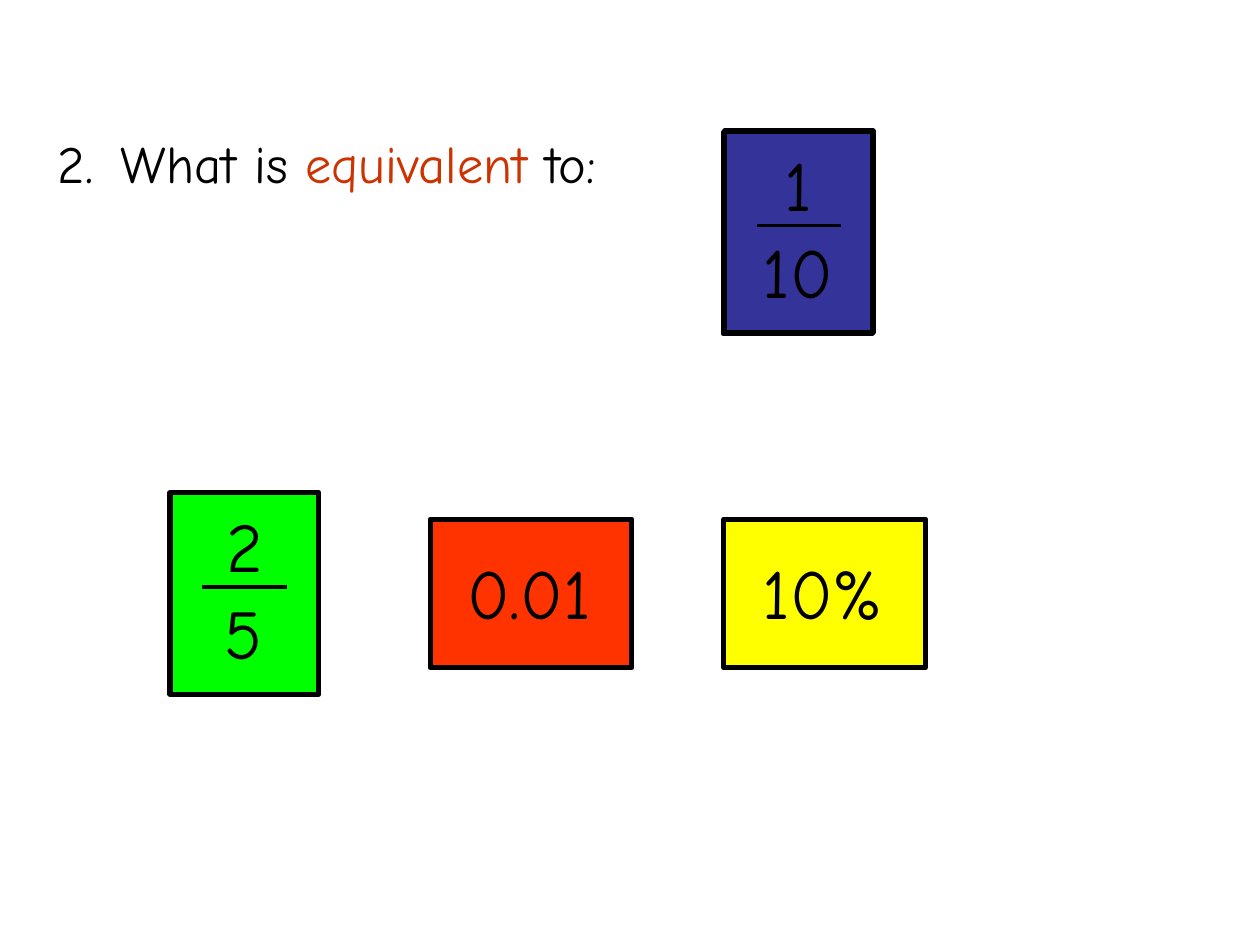
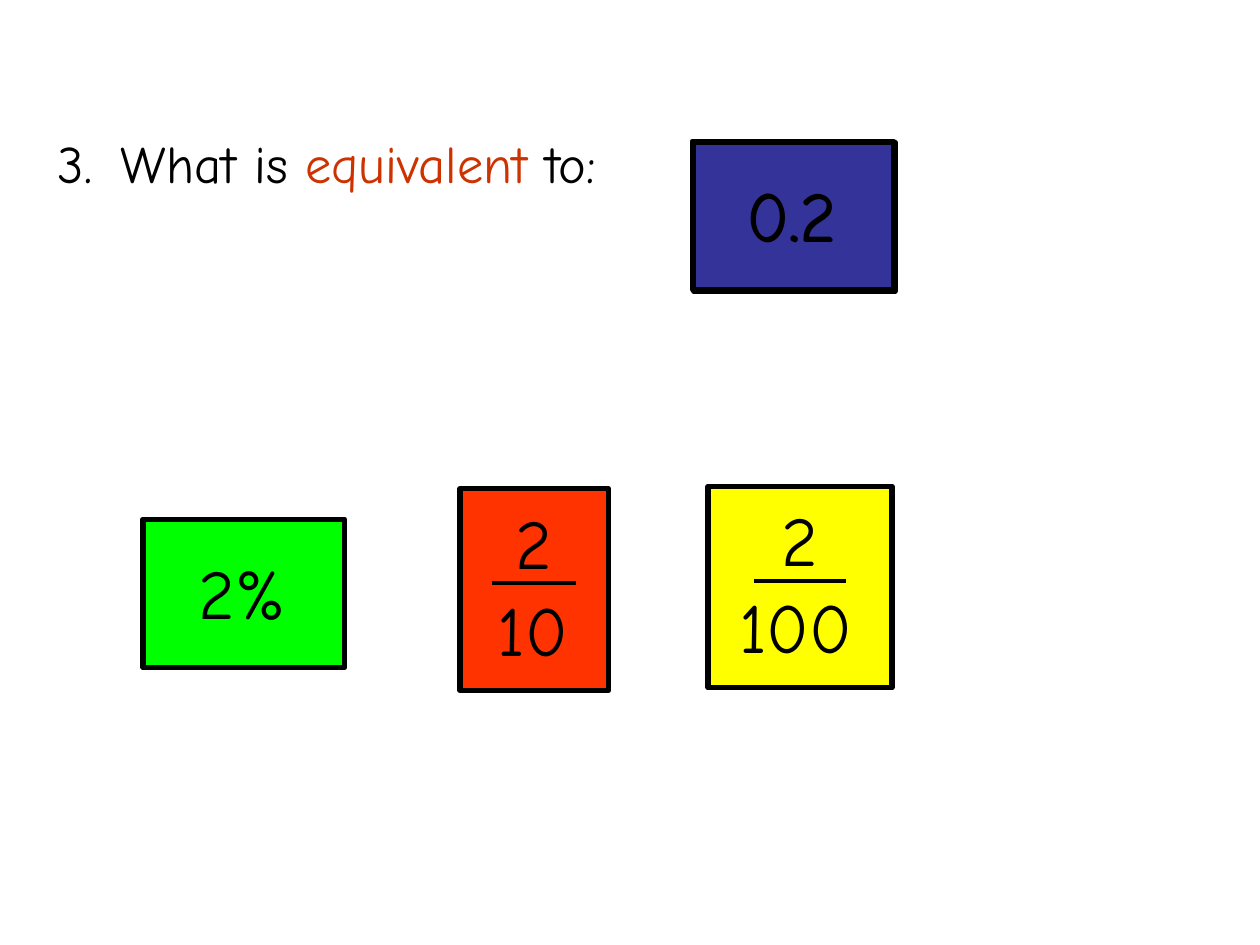
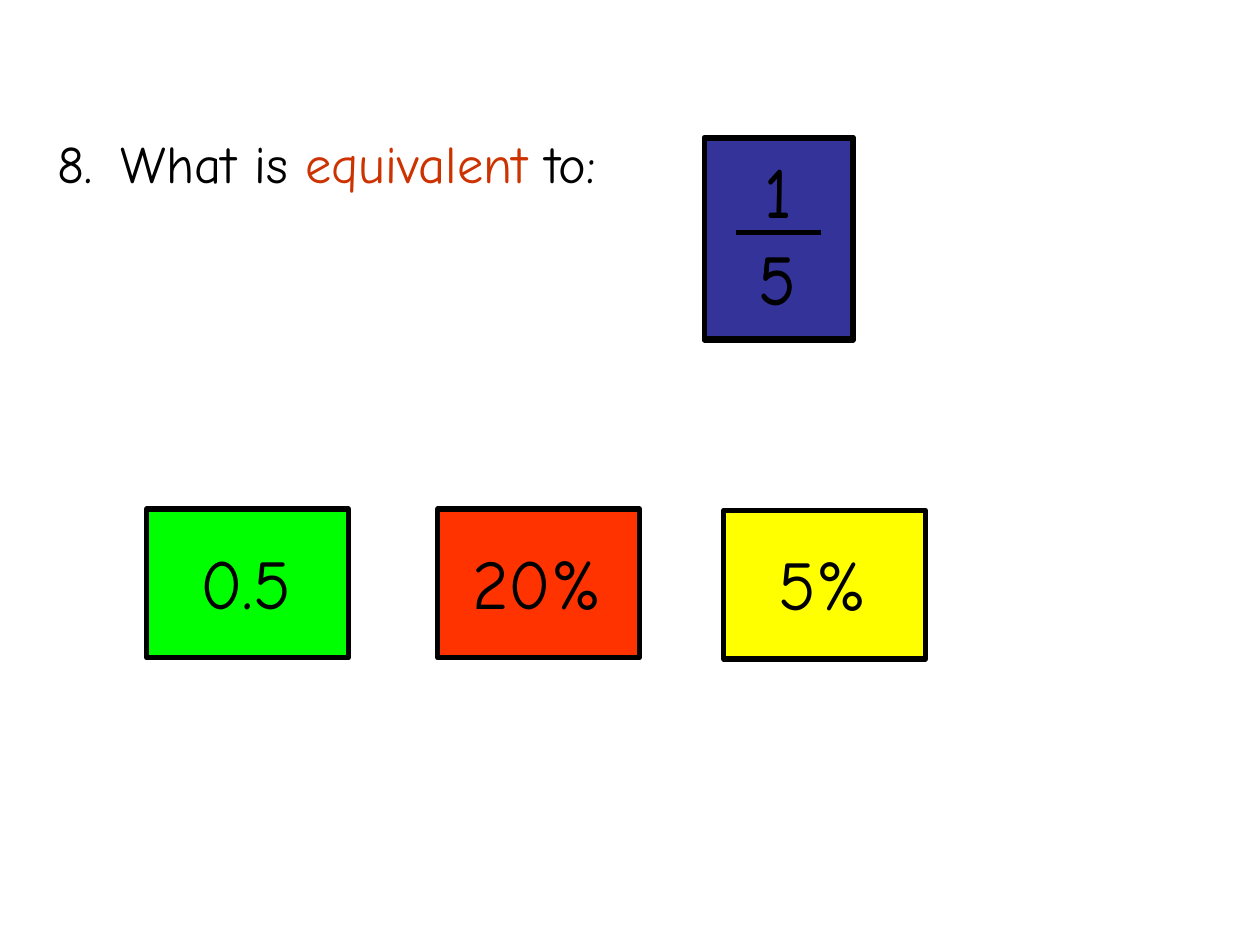
from dataclasses import dataclass

from pptx import Presentation
from pptx.dml.color import RGBColor
from pptx.enum.shapes import MSO_CONNECTOR, MSO_SHAPE
from pptx.enum.text import MSO_ANCHOR, MSO_AUTO_SIZE, PP_ALIGN
from pptx.oxml.ns import qn
from pptx.slide import Slide
from pptx.util import Emu, Inches, Pt

RECTANGLE = MSO_SHAPE.RECTANGLE
STRAIGHT = MSO_CONNECTOR.STRAIGHT
LEFT, CENTER = PP_ALIGN.LEFT, PP_ALIGN.CENTER
TOP, MIDDLE = MSO_ANCHOR.TOP, MSO_ANCHOR.MIDDLE
NO_AUTOFIT = MSO_AUTO_SIZE.NONE

SLIDE_WIDTH, SLIDE_HEIGHT = Inches(10), Inches(7.5)
GRID_COLUMNS = 100
CELL = SLIDE_WIDTH / GRID_COLUMNS  # square cells: 100 columns by 75 rows

FONT = "Comic Neue"
BLACK, ACCENT = "000000", "CC3300"
BLUE, GREEN, RED, YELLOW = "333399", "00FF00", "FF3300", "FFFF00"

LONG_SIDE, SHORT_SIDE = 16, 11.8
LABEL_HEIGHT = 7.7
NUMERATOR_OFFSET, BAR_OFFSET, DENOMINATOR_OFFSET = -3.85, -0.5, 3.05


@dataclass(frozen=True)
class Card:
    """A value such as "0.2" or "1/10", centred on a grid point."""
    value: str
    column: float
    row: float
    fill: str | None = None
    labelled: bool = True


@dataclass(frozen=True)
class Question:
    number: int
    cards: tuple[Card, ...]


QUESTIONS = (
    Question(2, (
        Card("1/10", 63.3, 18.5, labelled=False),
        Card("1/10", 63.4, 18.4, BLUE),
        Card("2/5", 19.4, 47.1, GREEN),
        Card("0.01", 42.15, 47.1, RED),
        Card("10%", 65.45, 47.1, YELLOW),
    )),
    Question(3, (
        Card("0.2", 63.05, 17.2, BLUE),
        Card("0.2", 62.95, 17.1),
        Card("2%", 19.35, 47.1, GREEN),
        Card("2/10", 42.4, 46.8, RED),
        Card("2/100", 63.5, 46.6, YELLOW),
    )),
    Question(8, (
        Card("1/5", 61.8, 19, BLUE),
        Card("1/5", 61.8, 18.9),
        Card("0.5", 19.65, 46.3, GREEN),
        Card("20%", 42.75, 46.3, RED),
        Card("5%", 65.45, 46.4, YELLOW),
    )),
)


def cells(count: float) -> Emu:
    return Emu(round(count * CELL))


def color(hex_code: str) -> RGBColor:
    return RGBColor.from_string(hex_code)


def centred(column: float, row: float, width: float, height: float) -> tuple[Emu, ...]:
    """Left, top, width and height of a box around a grid point."""
    return (cells(column - width / 2), cells(row - height / 2),
            cells(width), cells(height))


def add_title(slide: Slide, number: int) -> None:
    title = slide.shapes.title
    title.left, title.top = cells(3.6), cells(9.9)
    title.width, title.height = cells(51.9), cells(6)
    frame = title.text_frame
    frame.word_wrap, frame.auto_size = True, NO_AUTOFIT
    frame.vertical_anchor = TOP
    question = frame.paragraphs[0]
    question.alignment = LEFT
    question.font.name, question.font.size = FONT, Pt(30)
    hanging = cells(5)
    properties = question._p.get_or_add_pPr()
    properties.set("marL", str(hanging))
    properties.set("indent", str(-hanging))
    for words, shade in ((f"{number}.\tWhat is ", BLACK),
                         ("equivalent", ACCENT), (" to:", BLACK)):
        run = question.add_run()
        run.text = words
        run.font.color.rgb = color(shade)


def add_label(slide: Slide, text: str, column: float, row: float, width: float) -> None:
    frame = slide.shapes.add_textbox(
        *centred(column, row, width, LABEL_HEIGHT)).text_frame
    frame.word_wrap, frame.vertical_anchor = True, MIDDLE
    value = frame.paragraphs[0]
    value.text, value.alignment = text, CENTER
    value.font.name, value.font.size = FONT, Pt(40)
    value.font.color.rgb = color(BLACK)


def add_bar(slide: Slide, column: float, row: float, width: float) -> None:
    bar = slide.shapes.add_connector(
        STRAIGHT, cells(column - width / 2), cells(row),
        cells(column + width / 2), cells(row))
    bar.line.color.rgb, bar.line.width = color(BLACK), Pt(2.25)
    properties = bar._element.spPr
    properties.append(properties.makeelement(qn("a:effectLst"), {}))


def add_frame(slide: Slide, card: Card, width: float, height: float) -> None:
    frame = slide.shapes.add_shape(
        RECTANGLE, *centred(card.column, card.row, width, height))
    frame.shadow.inherit = False
    frame.line.color.rgb, frame.line.width = color(BLACK), Pt(3)
    if card.fill:
        frame.fill.solid()
        frame.fill.fore_color.rgb = color(card.fill)
    else:
        frame.fill.background()


def add_card(slide: Slide, card: Card) -> None:
    numerator, slash, denominator = card.value.partition("/")
    if not slash:
        add_frame(slide, card, LONG_SIDE, SHORT_SIDE)
        add_label(slide, card.value, card.column - 0.15, card.row - 0.15, 15.5)
        return
    wide = len(denominator) > 2
    add_frame(slide, card, 14.6 if wide else SHORT_SIDE, LONG_SIDE)
    if card.labelled:
        add_label(slide, numerator, card.column, card.row + NUMERATOR_OFFSET, 6.6)
        add_label(slide, denominator, card.column - (0.35 if wide else 0.1),
                  card.row + DENOMINATOR_OFFSET, 13.5 if wide else 8.2)
        add_bar(slide, card.column, card.row + BAR_OFFSET, 7.3 if wide else 6.7)


def main() -> None:
    deck = Presentation()
    deck.slide_width, deck.slide_height = SLIDE_WIDTH, SLIDE_HEIGHT
    title_only = deck.slide_layouts[5]
    for question in QUESTIONS:
        slide = deck.slides.add_slide(title_only)
        add_title(slide, question.number)
        for card in question.cards:
            add_card(slide, card)
    deck.save("out.pptx")


if __name__ == "__main__":
    main()
